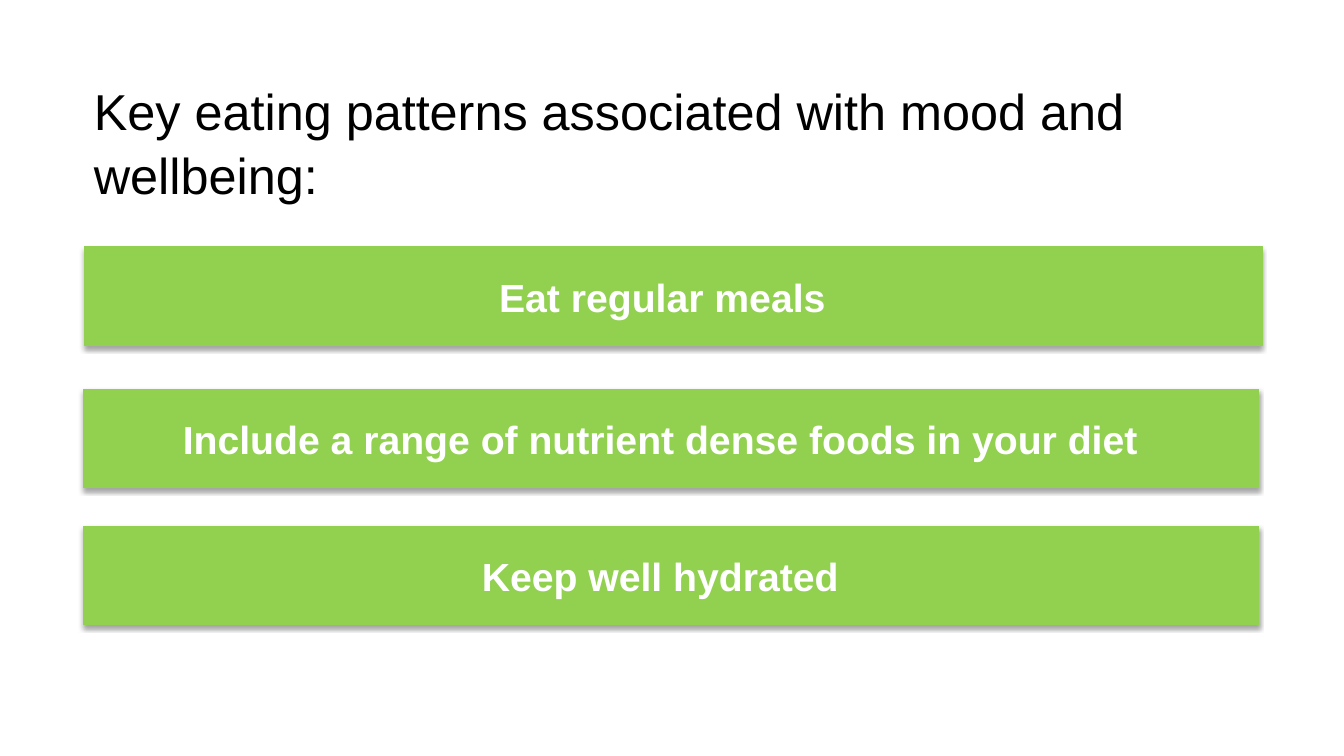
from lxml import etree
from pptx import Presentation
from pptx import util as u
from pptx.dml.color import RGBColor
from pptx.enum import shapes, text
from pptx.oxml.ns import qn

Pt = u.Pt
COLORS = {"title": "000000", "bar": "92D050", "label": "FFFFFF", "shadow": "000000"}
FONT = "Arial"
TITLE = "Key eating patterns associated with mood and wellbeing:"
# Each bar: label, left, top, width
BARS = [
    ("Eat regular meals", 60.5, 176.4, 841),
    ("Include a range of nutrient dense foods in your diet", 59.8, 277.9, 839.5),
    ("Keep well hydrated", 59.8, 375.8, 839.5),
]
BAR_HEIGHT = 70.6


def write_text(frame, words, size, color, bold=False, align=text.PP_ALIGN.LEFT,
               anchor=text.MSO_ANCHOR.TOP, line_spacing=1.0):
    frame.word_wrap = True
    frame.auto_size = text.MSO_AUTO_SIZE.NONE
    frame.vertical_anchor = anchor
    paragraph = frame.paragraphs[0]
    paragraph.text = words
    paragraph.alignment = align
    paragraph.line_spacing = line_spacing
    paragraph.space_before = Pt(0)
    font = paragraph.runs[0].font
    font.name, font.size, font.bold = FONT, Pt(size), bold
    font.color.rgb = RGBColor.from_string(COLORS[color])


def add_soft_shadow(shape, blur, distance, opacity):
    shape.shadow.inherit = False
    effects = shape._element.spPr.find(qn("a:effectLst"))
    shadow = etree.SubElement(effects, qn("a:outerShdw"), blurRad=str(Pt(blur)),
                              dist=str(Pt(distance)), dir="5400000", rotWithShape="0")
    color = etree.SubElement(shadow, qn("a:srgbClr"), val=COLORS["shadow"])
    etree.SubElement(color, qn("a:alpha"), val=str(opacity * 1000))


def add_title(slide, left, top, width, height):
    title = slide.shapes.title
    title.left, title.top, title.width, title.height = map(Pt, (left, top, width, height))
    write_text(title.text_frame, TITLE, 36, "title", line_spacing=1.05)


def add_bar(slide, label, left, top, width, height):
    bar = slide.shapes.add_shape(shapes.MSO_SHAPE.RECTANGLE,
                                 *map(Pt, (left, top, width, height)))
    color = RGBColor.from_string(COLORS["bar"])
    bar.fill.solid()
    bar.fill.fore_color.rgb = color
    bar.line.color.rgb = color
    bar.line.width = Pt(0.75)
    add_soft_shadow(bar, blur=3.1, distance=1.8, opacity=35)
    # The wider right margin sets the label slightly left of centre
    bar.text_frame.margin_right = Pt(23)
    write_text(bar.text_frame, label, 28, "label", bold=True,
               align=text.PP_ALIGN.CENTER, anchor=text.MSO_ANCHOR.MIDDLE)


def main():
    presentation = Presentation()
    presentation.slide_width, presentation.slide_height = Pt(960), Pt(540)
    slide = presentation.slides.add_slide(presentation.slide_layouts[5])

    # Heading
    add_title(slide, 59.8, 51.8, 841.7, 73.4)

    # Key messages
    for label, left, top, width in BARS:
        add_bar(slide, label, left, top, width, BAR_HEIGHT)

    presentation.save("out.pptx")


if __name__ == "__main__":
    main()
